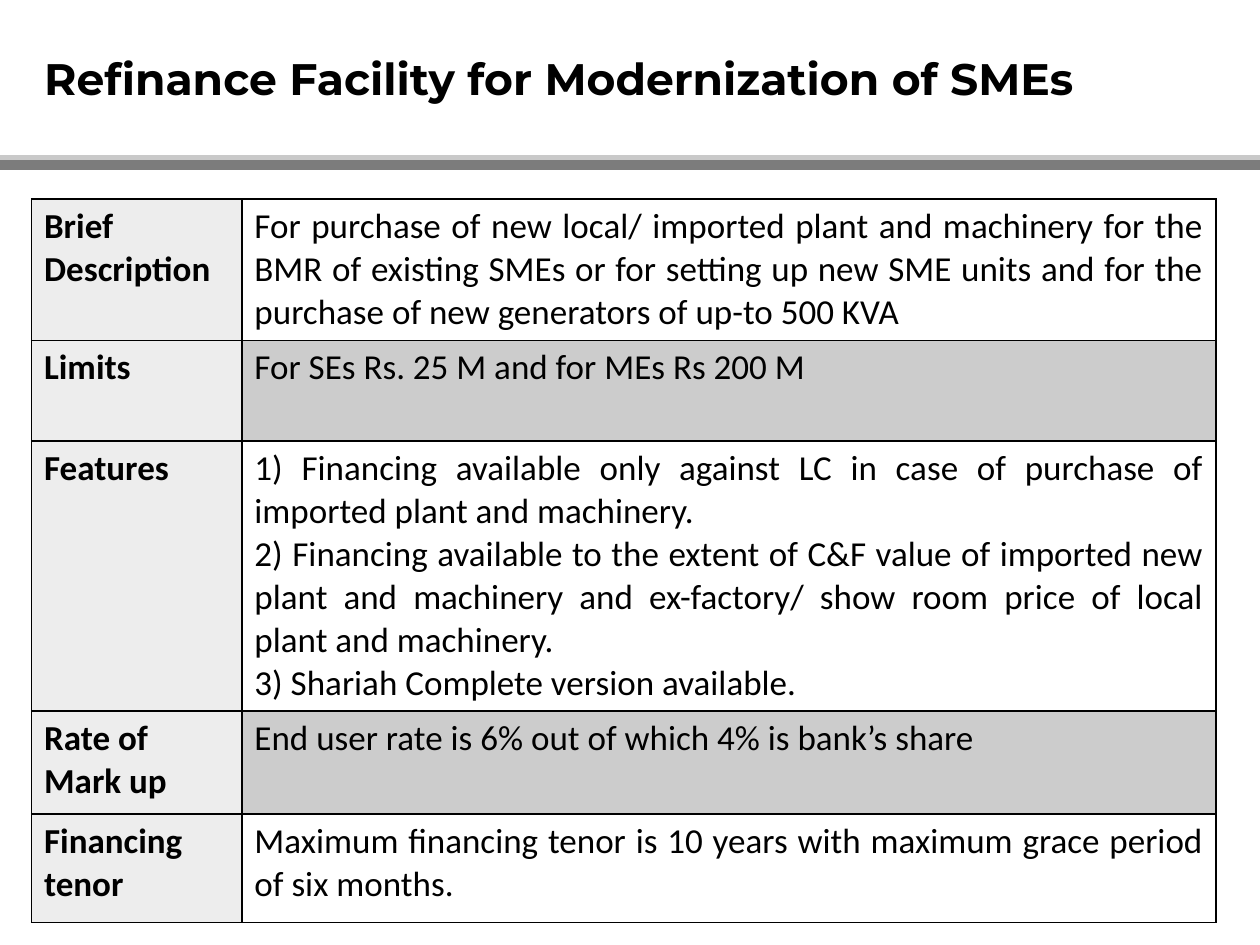
from lxml.etree import SubElement as Sub
from pptx import Presentation
from pptx.dml.color import RGBColor
from pptx.enum.shapes import MSO_CONNECTOR as Conn
from pptx.enum.text import MSO_ANCHOR as Anchor, MSO_AUTO_SIZE as Fit, PP_ALIGN as Align
from pptx.oxml import parse_xml
from pptx.oxml.ns import nsdecls, qn
from pptx.util import Inches, Pt

COLS, ROWS = 40, 30  # grid over the slide, square units of 0.25 in
UNIT = 0.25


def hue(code):
    return RGBColor.from_string(code)


def grid(*vals):
    return [Inches(val * UNIT) for val in vals]


class Deck:
    ink, tint = "000000", "EDEDED"
    head, body = "Montserrat", "Calibri"

    def __init__(self):
        self.prs = Presentation()
        self.prs.slide_width, self.prs.slide_height = grid(COLS, ROWS)
        self.slide = self.prs.slides.add_slide(self.prs.slide_layouts[5])

    def font(self, para, name, size, bold):
        font = para.font
        font.name, font.size, font.bold = name, Pt(size), bold
        font.color.rgb = hue(self.ink)

    def title(self, text, x, y, w, h):
        box = self.slide.shapes.title
        box.left, box.top, box.width, box.height = grid(x, y, w, h)
        frame = box.text_frame
        frame.text, frame.word_wrap = text, True
        frame.auto_size, frame.vertical_anchor = Fit.NONE, Anchor.MIDDLE
        para = frame.paragraphs[0]
        para.alignment, para.line_spacing = Align.LEFT, 0.9
        self.font(para, self.head, 25.2, True)

    def rule(self, y, color, width):
        line = self.slide.shapes.add_connector(Conn.STRAIGHT, *grid(0, y, COLS, y))
        line.line.color.rgb, line.line.width = hue(color), Pt(width)
        Sub(line._element.spPr, qn("a:effectLst"))

    def border(self, cell):
        props = cell._tc.get_or_add_tcPr()
        for spot, side in enumerate("LRTB"):
            props.insert(spot, parse_xml(
                f'<a:ln{side} w="12700" {nsdecls("a")}><a:solidFill>'
                f'<a:srgbClr val="{self.ink}"/></a:solidFill></a:ln{side}>'))

    def cell(self, cell, text, bold, align, color=None, alpha=None):
        cell.text = text
        for para in cell.text_frame.paragraphs:
            para.alignment = align
            self.font(para, self.body, 20, bold)
        if color:
            cell.fill.solid()
            cell.fill.fore_color.rgb = hue(color)
        else:
            cell.fill.background()
        if alpha:
            tone = cell._tc.tcPr.find(".//" + qn("a:srgbClr"))
            Sub(tone, qn("a:alpha"), val=str(alpha * 1000))
        self.border(cell)

    def table(self, x, y, cols, rows):
        highs = [row[0] for row in rows]
        table = self.slide.shapes.add_table(
            len(rows), len(cols), *grid(x, y, sum(cols), sum(highs))).table
        table.first_row = table.horz_banding = False
        for col, wide in zip(table.columns, grid(*cols)):
            col.width = wide
        for i, (high, label, text, align) in enumerate(rows):
            table.rows[i].height = grid(high)[0]
            self.cell(table.cell(i, 0), label, True, Align.LEFT, self.tint)
            # Every second row is shaded
            shade = (self.ink, 20) if i % 2 else ()
            self.cell(table.cell(i, 1), text, False, align, *shade)


def main():
    deck = Deck()

    # Heading with a two-tone rule below
    deck.rule(5.08, "C9C9C9", 6)
    deck.rule(5.24, "7C7C7C", 6)
    deck.title("Refinance Facility for Modernization of SMEs", 1, 1, 35.6, 3.16)

    # Facility terms: height, label, text, alignment
    features = "\n".join([
        "1) Financing available only against LC in case of purchase of "
        "imported plant and machinery.",
        "2) Financing available to the extent of C&F value of imported new "
        "plant and machinery and ex-factory/ show room price of local "
        "plant and machinery.",
        "3) Shariah Complete version available.",
    ])
    deck.table(1, 6.32, [6.68, 30.92], [
        (4.4, "Brief Description",
         "For purchase of new local/ imported plant and machinery for the "
         "BMR of existing SMEs or for setting up new SME units and for the "
         "purchase of new generators of up-to 500 KVA", Align.JUSTIFY),
        (3.2, "Limits", "For SEs Rs. 25 M and for MEs Rs 200 M", Align.JUSTIFY),
        (7.56, "Features", features, Align.JUSTIFY),
        (3.28, "Rate of Mark up",
         "End user rate is 6% out of which 4% is bank’s share", Align.LEFT),
        (3.44, "Financing tenor",
         "Maximum financing tenor is 10 years with maximum grace period "
         "of six months.", Align.JUSTIFY),
    ])

    deck.prs.save("out.pptx")


if __name__ == "__main__":
    main()
